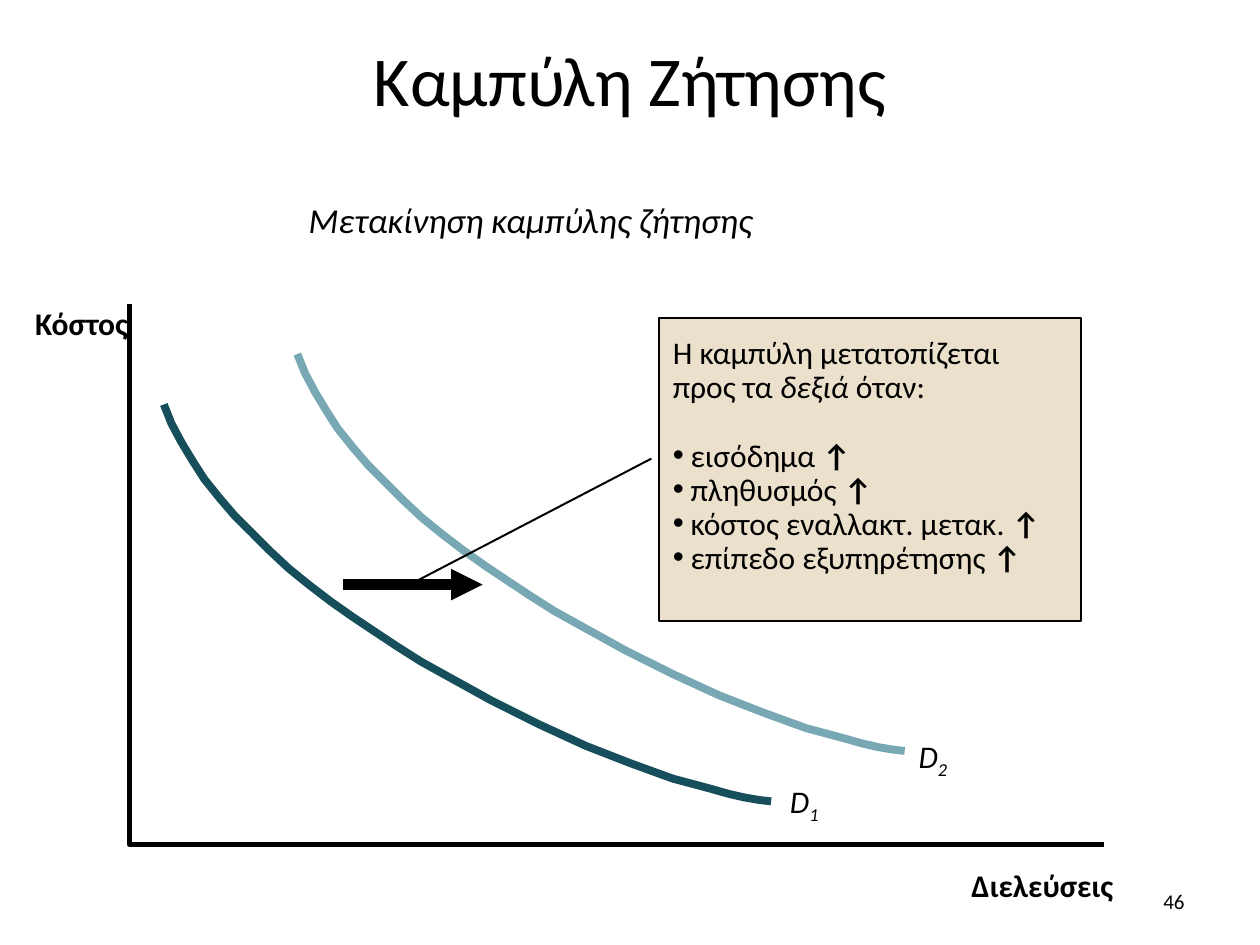
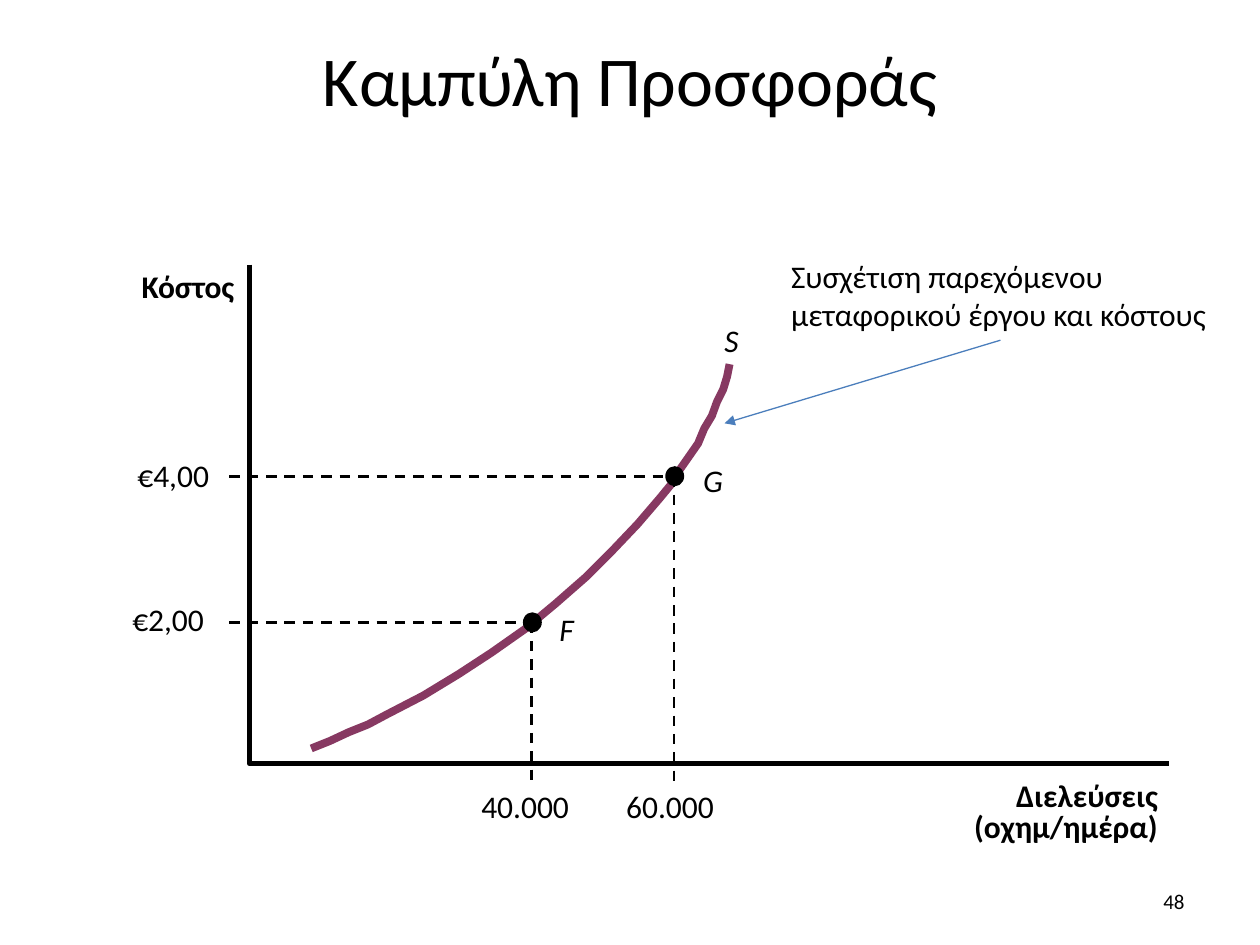
from dataclasses import dataclass

from pptx import Presentation
from pptx.dml.color import RGBColor
from pptx.enum.dml import MSO_LINE as Dash
from pptx.enum.shapes import MSO_CONNECTOR as Link, MSO_SHAPE as Form
from pptx.enum.text import MSO_ANCHOR as Anchor, MSO_AUTO_SIZE as Fit, PP_ALIGN as Align
from pptx.oxml.ns import qn
from pptx.oxml.xmlchemy import OxmlElement as Node
from pptx.util import Inches, Pt

BLACK = RGBColor(0x00, 0x00, 0x00)
SAND = RGBColor(0xEB, 0xE0, 0xCC)
TEAL = RGBColor(0x17, 0x4E, 0x5C)
AQUA = RGBColor(0x77, 0xA8, 0xB4)
PLUM = RGBColor(0x87, 0x39, 0x62)
BLUE = RGBColor(0x4B, 0x7E, 0xBC)
FONT = "Calibri"

Points = list[tuple[float, float]]

DEMAND: Points = [
    (7.18, 5.96), (7.09, 5.95), (6.97, 5.93), (6.84, 5.9), (6.7, 5.86), (6.55, 5.82),
    (6.4, 5.78), (6.07, 5.66), (5.71, 5.52), (5.34, 5.35), (4.96, 5.16), (4.78, 5.06),
    (4.58, 4.95), (4.4, 4.85), (4.21, 4.73), (4.03, 4.61), (3.85, 4.49), (3.68, 4.37),
    (3.51, 4.24), (3.35, 4.11), (3.2, 3.97), (3.06, 3.83), (2.92, 3.69), (2.8, 3.55),
    (2.68, 3.4), (2.59, 3.26), (2.5, 3.11), (2.42, 2.96), (2.36, 2.81),
]
SUPPLY: Points = [
    (2.47, 5.94), (2.62, 5.88), (2.77, 5.81), (2.92, 5.75), (3.07, 5.67), (3.36, 5.52),
    (3.64, 5.35), (3.9, 5.18), (4.17, 4.99), (4.41, 4.79), (4.65, 4.58), (4.86, 4.37),
    (5.06, 4.16), (5.24, 3.95), (5.33, 3.84), (5.4, 3.72), (5.47, 3.62), (5.54, 3.52),
    (5.59, 3.4), (5.65, 3.3), (5.69, 3.19), (5.74, 3.09), (5.77, 2.99), (5.79, 2.89),
]
SHIFT = (-1.06, 0.4)
FACTORS = ["εισόδημα", "πληθυσμός", "κόστος εναλλακτ. μετακ.", "επίπεδο εξυπηρέτησης"]


@dataclass
class Label:
    text: str
    left: float
    top: float
    width: float
    height: float = 0.3
    sub: str = ""
    size: float = 18
    bold: bool = False
    ital: bool = False
    wrap: bool = False
    inset: bool = False
    space: float = 1.0
    align: Align = Align.LEFT
    anchor: Anchor = Anchor.TOP


@dataclass
class Stroke:
    start: tuple[float, float]
    end: tuple[float, float]
    width: float
    color: RGBColor = BLACK
    dash: bool = False
    arrow: bool = False


def write(par, text: str, size: float = 18, bold: bool = False,
          ital: bool = False, base: int = 0) -> None:
    run = par.add_run()
    run.text = text
    font = run.font
    font.name, font.size, font.bold, font.italic = FONT, Pt(size), bold, ital
    font.color.rgb = BLACK
    if base:
        font._element.set("baseline", str(base * 1000))


def place(shape, left: float, top: float, width: float, height: float) -> None:
    shape.left, shape.top = Inches(left), Inches(top)
    shape.width, shape.height = Inches(width), Inches(height)


def trim(frame) -> None:
    frame.margin_left = frame.margin_right = Inches(0)
    frame.margin_top = frame.margin_bottom = Inches(0)


def add_label(slide, tag: Label) -> None:
    box = slide.shapes.add_textbox(Inches(tag.left), Inches(tag.top),
                                   Inches(tag.width), Inches(tag.height))
    frame = box.text_frame
    if not tag.inset:
        trim(frame)
        frame.auto_size = Fit.SHAPE_TO_FIT_TEXT
    frame.word_wrap = tag.wrap
    frame.vertical_anchor = tag.anchor
    par = frame.paragraphs[0]
    par.alignment, par.line_spacing = tag.align, tag.space
    write(par, tag.text, tag.size, tag.bold, tag.ital)
    if tag.sub:
        write(par, tag.sub, tag.size, tag.bold, tag.ital, base=-25)


def add_stroke(slide, item: Stroke) -> None:
    ends = [Inches(n) for n in (*item.start, *item.end)]
    link = slide.shapes.add_connector(Link.STRAIGHT, *ends)
    link.line.color.rgb, link.line.width = item.color, Pt(item.width)
    if item.dash:
        link.line.dash_style = Dash.DASH
    props = link.element.spPr
    if item.arrow:
        head = Node("a:tailEnd")
        head.set("type", "triangle")
        props.find(qn("a:ln")).append(head)
    props.append(Node("a:effectLst"))


def add_curve(slide, points: Points, color: RGBColor, width: float = 4.5,
              shift: tuple[float, float] = (0, 0)) -> None:
    spots = [(Inches(x + shift[0]), Inches(y + shift[1])) for x, y in points]
    form = slide.shapes.build_freeform(*spots[0], scale=1.0)
    form.add_line_segments(spots[1:], close=False)
    curve = form.convert_to_shape()
    curve.shadow.inherit = False
    curve.fill.background()
    curve.line.color.rgb, curve.line.width = color, Pt(width)


def add_axes(slide, left: float, top: float, right: float, base: float) -> None:
    add_curve(slide, [(left, top), (left, base), (right, base)], BLACK, 3)


def add_shape(slide, form: Form, at: tuple[float, float, float, float],
              fill: RGBColor, edge: float = 0) -> None:
    shape = slide.shapes.add_shape(form, *[Inches(n) for n in at])
    shape.shadow.inherit = False
    shape.fill.solid()
    shape.fill.fore_color.rgb = fill
    if edge:
        shape.line.color.rgb, shape.line.width = BLACK, Pt(edge)
    else:
        shape.line.fill.background()


def start_slide(deck, layout: int, title: str, page: int):
    slide = deck.slides.add_slide(deck.slide_layouts[layout])
    head = slide.shapes.title
    place(head, 0, 0, 10, 1.25)
    head.text_frame.vertical_anchor = Anchor.MIDDLE
    par = head.text_frame.paragraphs[0]
    par.alignment = Align.CENTER
    write(par, title, size=40)
    add_label(slide, Label(str(page), 7.17, 6.95, 2.33, 0.4, size=12, wrap=True, inset=True,
                           align=Align.RIGHT, anchor=Anchor.MIDDLE))
    return slide


def set_bullet(par, mark: str = "") -> None:
    props = par._p.get_or_add_pPr()
    hang = Inches(0.14) if mark else 0
    props.set("marL", str(hang))
    props.set("indent", str(-hang))
    bullet = Node("a:buChar" if mark else "a:buNone")
    if mark:
        bullet.set("char", mark)
    props.append(bullet)


def fill_list(slide) -> None:
    body = slide.placeholders[1]
    body.element.getparent().append(body.element)
    place(body, 5.34, 2.68, 3.14, 2.18)
    frame = body.text_frame
    trim(frame)
    frame.auto_size, frame.word_wrap = Fit.NONE, True
    lead = frame.paragraphs[0]
    write(lead, "Η καμπύλη μετατοπίζεται προς τα ")
    write(lead, "δεξιά", ital=True)
    write(lead, " όταν:")
    for factor in FACTORS:
        par = frame.add_paragraph()
        write(par, factor + " ")
        write(par, "↑", bold=True)
    for rank, par in enumerate(frame.paragraphs):
        par.line_spacing = 0.9
        par.space_before = Pt(19.5 if rank == 1 else 0)
        set_bullet(par, "•" if rank else "")


def draw_demand(deck) -> None:
    slide = start_slide(deck, 1, "Καμπύλη Ζήτησης", 46)
    add_axes(slide, 1.03, 2.41, 8.76, 6.7)
    add_curve(slide, DEMAND, AQUA)
    add_curve(slide, DEMAND, TEAL, shift=SHIFT)
    for tag in (
        Label("Διελεύσεις", 7.71, 6.87, 1.14, bold=True),
        Label("Κόστος", 0.28, 2.41, 0.74, bold=True),
        Label("D", 7.29, 5.85, 0.27, sub="2", ital=True),
        Label("D", 6.27, 6.21, 0.27, sub="1", ital=True),
        Label("Mετακίνηση καμπύλης ζήτησης", 2.35, 1.53, 3.78, 0.44, size=20, ital=True,
              wrap=True, inset=True, align=Align.JUSTIFY),
    ):
        add_label(slide, tag)
    add_stroke(slide, Stroke((2.72, 4.64), (3.83, 4.64), 6, arrow=True))
    add_stroke(slide, Stroke((3.29, 4.62), (5.17, 3.64), 1.13))
    add_shape(slide, Form.RECTANGLE, (5.23, 2.52, 3.35, 2.41), SAND, 1.13)
    fill_list(slide)


def draw_supply(deck) -> None:
    slide = start_slide(deck, 5, "Καμπύλη Προσφοράς", 48)
    add_curve(slide, SUPPLY, PLUM)
    add_axes(slide, 1.98, 2.1, 9.28, 6.06)
    for x, y in ((4.22, 4.94), (5.35, 3.78)):
        add_shape(slide, Form.OVAL, (x - 0.07, y - 0.08, 0.15, 0.16), BLACK)
        add_stroke(slide, Stroke((1.82, y), (x, y), 1.5, dash=True))
        add_stroke(slide, Stroke((x, y), (x, 6.24), 1.5, dash=True))
    for tag in (
        Label("F", 4.44, 4.84, 0.15, ital=True),
        Label("G", 5.58, 3.66, 0.19, ital=True),
        Label("S", 5.75, 2.55, 0.17, ital=True),
        Label("€2,00", 1.05, 4.76, 0.63, wrap=True),
        Label("€4,00", 1.09, 3.62, 0.58),
        Label("40.000", 3.82, 6.25, 0.7),
        Label("60.000", 4.97, 6.25, 0.7),
        Label("Διελεύσεις (οχημ/ημέρα)", 6.77, 6.22, 2.42, 0.49, bold=True, wrap=True,
              space=0.8, align=Align.RIGHT),
        Label("Κόστος", 0.71, 2.18, 1.15, 0.25, bold=True, wrap=True,
              space=0.8, align=Align.RIGHT),
        Label("Συσχέτιση παρεχόμενου μεταφορικού έργου και κόστους", 6.18, 1.99, 3.52, 0.71,
              wrap=True, inset=True),
    ):
        add_label(slide, tag)
    add_stroke(slide, Stroke((7.94, 2.7), (5.75, 3.36), 0.75, BLUE, arrow=True))


def main() -> None:
    deck = Presentation()
    deck.slide_width, deck.slide_height = Inches(10), Inches(7.5)
    draw_demand(deck)
    draw_supply(deck)
    deck.save("out.pptx")


if __name__ == "__main__":
    main()
